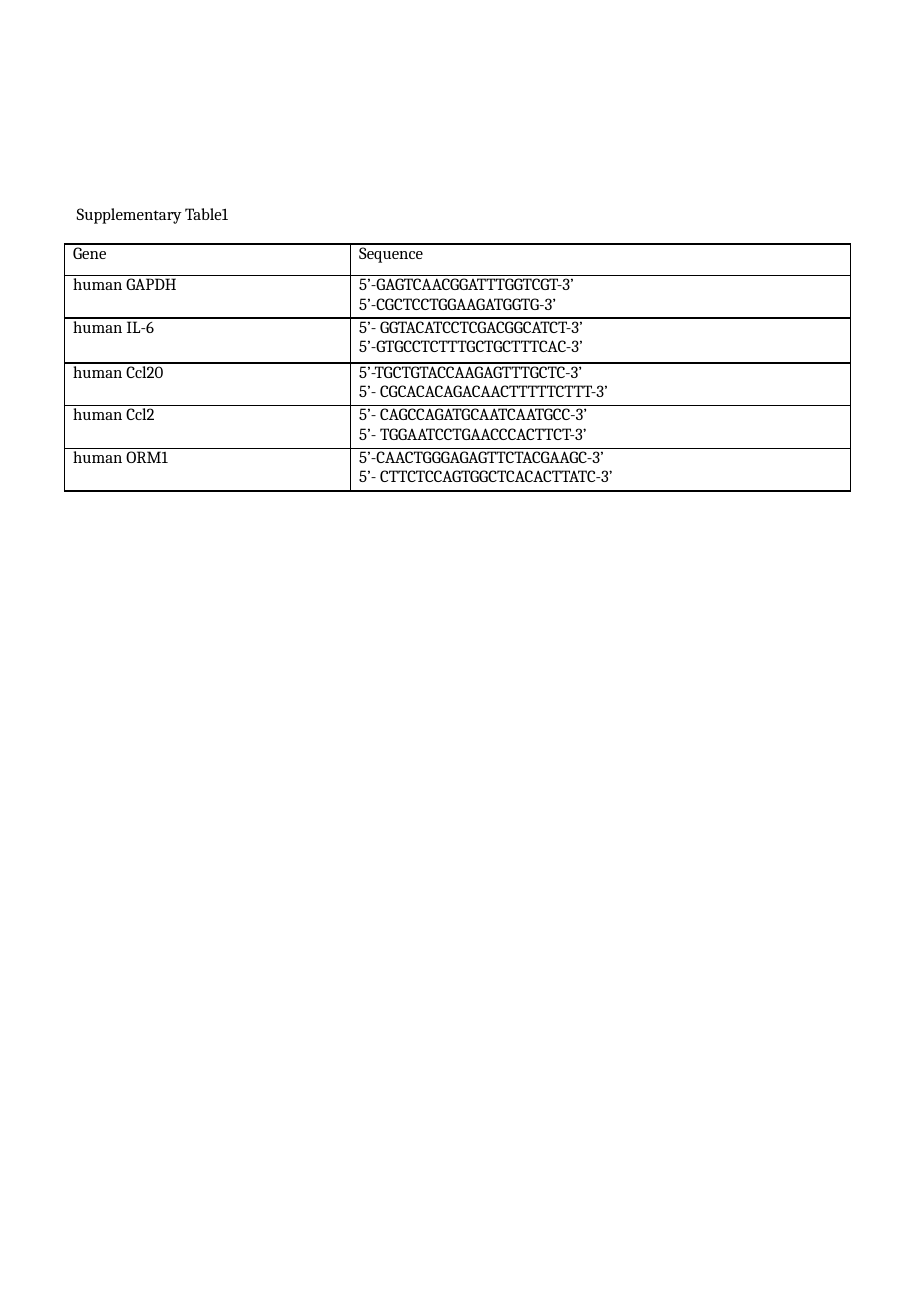
"""Build the supplementary table of gene primer sequences."""
from dataclasses import dataclass

from lxml import etree
from pptx import Presentation
from pptx.dml.color import RGBColor
from pptx.enum.text import MSO_ANCHOR, MSO_AUTO_SIZE, PP_ALIGN
from pptx.oxml.ns import qn
from pptx.util import Cm, Pt

LEFT = PP_ALIGN.LEFT
MIDDLE = MSO_ANCHOR.MIDDLE
TOP = MSO_ANCHOR.TOP
NO_AUTOSIZE = MSO_AUTO_SIZE.NONE
TITLE_ONLY = 5

TITLE = "Supplementary Table1"
ROWS = [
    ("Gene", ["Sequence"]),
    ("human GAPDH", ["5’-GAGTCAACGGATTTGGTCGT-3’", "5’-CGCTCCTGGAAGATGGTG-3’"]),
    ("human IL-6", ["5’- GGTACATCCTCGACGGCATCT-3’", "5’-GTGCCTCTTTGCTGCTTTCAC-3’"]),
    ("human Ccl20", ["5’-TGCTGTACCAAGAGTTTGCTC-3’", "5’- CGCACACAGACAACTTTTTCTTT-3’"]),
    ("human Ccl2", ["5’- CAGCCAGATGCAATCAATGCC-3’", "5’- TGGAATCCTGAACCCACTTCT-3’"]),
    ("human ORM1", ["5’-CAACTGGGAGAGTTCTACGAAGC-3’", "5’- CTTCTCCAGTGGCTCACACTTATC-3’"]),
]
ROW_HEIGHTS = [0.66, 0.89, 0.94, 0.89, 0.89, 0.89]
COLUMN_WIDTHS = [5.98, 10.45]
TABLE_LEFT, TABLE_TOP = 1.35, 5.1
TITLE_HEIGHT = 1.27
CELL_MARGIN = 0.18


@dataclass(frozen=True)
class Theme:
    """Hold the colours, font and sizes of the slide."""
    font: str = "Cambria"
    size: int = 10
    ink: str = "000000"
    border: int = 1


THEME = Theme()


def format_text(text_frame):
    """Apply the theme to every run, aligned left."""
    for paragraph in text_frame.paragraphs:
        paragraph.alignment = LEFT
        for run in paragraph.runs:
            run.font.name = THEME.font
            run.font.size = Pt(THEME.size)
            run.font.color.rgb = RGBColor.from_string(THEME.ink)


def add_borders(cell):
    """Draw a solid line on all four sides of a cell."""
    properties = cell._tc.get_or_add_tcPr()
    for position, side in enumerate(("lnL", "lnR", "lnT", "lnB")):
        line = etree.Element(qn(f"a:{side}"), w=str(Pt(THEME.border)))
        fill = etree.SubElement(line, qn("a:solidFill"))
        etree.SubElement(fill, qn("a:srgbClr"), val=THEME.ink)
        properties.insert(position, line)


def fill_cell(cell, lines):
    """Write the lines into a cell and format it."""
    cell.text_frame.text = "\n".join(lines)
    cell.margin_left = cell.margin_right = Cm(CELL_MARGIN)
    cell.margin_top = cell.margin_bottom = 0
    cell.vertical_anchor = TOP
    cell.fill.background()
    format_text(cell.text_frame)
    add_borders(cell)


def add_title(slide):
    """Place the title just above the table."""
    title = slide.shapes.title
    title.left, title.top = Cm(TABLE_LEFT), Cm(TABLE_TOP - TITLE_HEIGHT)
    title.width, title.height = Cm(sum(COLUMN_WIDTHS)), Cm(TITLE_HEIGHT)
    title.text_frame.text = TITLE
    title.text_frame.auto_size = NO_AUTOSIZE
    title.text_frame.vertical_anchor = MIDDLE
    format_text(title.text_frame)


def add_primer_table(slide):
    """Add the table of genes and sequences."""
    table = slide.shapes.add_table(
        len(ROWS), len(COLUMN_WIDTHS), Cm(TABLE_LEFT), Cm(TABLE_TOP),
        Cm(sum(COLUMN_WIDTHS)), Cm(sum(ROW_HEIGHTS))).table
    table.first_row = table.horz_banding = False
    for column, width in zip(table.columns, COLUMN_WIDTHS):
        column.width = Cm(width)
    for row, height, (gene, sequences) in zip(table.rows, ROW_HEIGHTS, ROWS):
        row.height = Cm(height)
        fill_cell(row.cells[0], [gene])
        fill_cell(row.cells[1], sequences)


def main():
    """Create the presentation and save it."""
    presentation = Presentation()
    presentation.slide_width, presentation.slide_height = Cm(19.05), Cm(27.51)
    slide = presentation.slides.add_slide(presentation.slide_layouts[TITLE_ONLY])
    add_title(slide)
    add_primer_table(slide)
    presentation.save("out.pptx")


if __name__ == "__main__":
    main()
